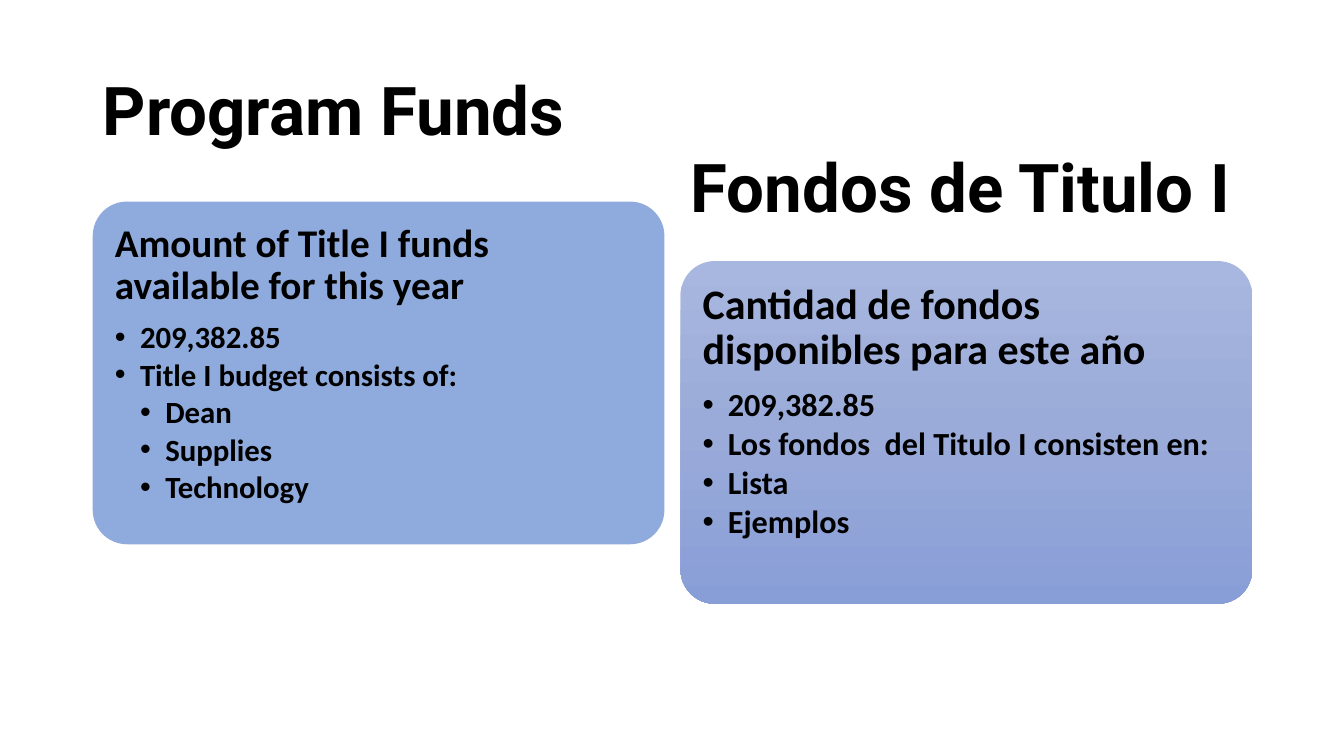
from copy import deepcopy
from dataclasses import dataclass

from lxml.etree import SubElement
from pptx import Presentation
from pptx.dml.color import RGBColor as Rgb
from pptx.enum.shapes import MSO_SHAPE as Shape
from pptx.enum.text import MSO_ANCHOR as Anchor, MSO_AUTO_SIZE as Fit, PP_ALIGN as Align
from pptx.oxml.ns import qn
from pptx.util import Inches, Pt

COLORS = {
    "text": "000000",
    "blue": "8FAADC",
    "top": "A8B7DF",
    "middle": "9AABD9",
    "bottom": "889ED7",
}
CARD_SIZE = (5.67, 3.4)
STEP = 0.25


@dataclass
class Card:
    left: float
    top: float
    fill: tuple[str, ...]
    head: str
    head_size: int
    item_size: int
    items: tuple[tuple[int, str], ...]


CARDS = (
    Card(0.92, 2, ("blue",), "Amount of Title I funds available for this year", 28, 22, (
        (1, "209,382.85"),
        (1, "Title I budget consists of:"),
        (2, "Dean"),
        (2, "Supplies"),
        (2, "Technology"),
    )),
    Card(6.75, 2.59, ("top", "middle", "bottom"),
         "Cantidad de fondos disponibles para este año", 30, 23, (
        (1, "209,382.85"),
        (1, "Los fondos  del Titulo I consisten en:"),
        (1, "Lista"),
        (1, "Ejemplos"),
    )),
)


def color(name: str) -> Rgb:
    return Rgb.from_string(COLORS[name])


def assign(target, values: dict) -> None:
    for name, value in values.items():
        setattr(target, name, value)


def write(para, text: str, size: float, face: str, form: dict) -> None:
    assign(para, {"alignment": Align.LEFT, **form})
    run = para.add_run()
    run.text = text
    assign(run.font, {"name": face, "size": Pt(size), "bold": True})
    run.font.color.rgb = color("text")


def add_bullet(para, level: int) -> None:
    props = para._p.get_or_add_pPr()
    props.set("marL", str(Inches(STEP * level)))
    props.set("indent", str(-Inches(STEP)))
    SubElement(props, qn("a:buFont"), typeface="Arial")
    SubElement(props, qn("a:buChar"), char="•")


def paint(shape, names: tuple[str, ...]) -> None:
    fill = shape.fill
    if len(names) == 1:
        fill.solid()
        fill.fore_color.rgb = color(names[0])
        return
    fill.gradient()
    fill.gradient_angle = 270
    first = shape._element.spPr.find(".//" + qn("a:gs"))
    for _ in names[2:]:
        first.addnext(deepcopy(first))
    for i, (stop, name) in enumerate(zip(fill.gradient_stops, names)):
        stop.position = i / (len(names) - 1)
        stop.color.rgb = color(name)


def draw_card(slide, card: Card) -> None:
    place = map(Inches, (card.left, card.top, *CARD_SIZE))
    shape = slide.shapes.add_shape(Shape.ROUNDED_RECTANGLE, *place)
    shape.adjustments[0] = 0.1
    shape.shadow.inherit = False
    shape.line.fill.background()
    paint(shape, card.fill)
    frame = shape.text_frame
    sides = ("left", "top", "right", "bottom")
    assign(frame, {f"margin_{side}": Inches(0.12) for side in sides})
    assign(frame, {"word_wrap": True, "vertical_anchor": Anchor.TOP})
    write(frame.paragraphs[0], card.head, card.head_size, "Calibri",
          {"line_spacing": 0.9, "space_after": Pt(card.head_size * 0.35)})
    for level, text in card.items:
        para = frame.add_paragraph()
        write(para, text, card.item_size, "Calibri",
              {"level": level, "line_spacing": 0.9, "space_after": Pt(3)})
        add_bullet(para, level)


def draw_title(shape, text: str, box: tuple[float, ...], form: dict, para: dict) -> None:
    assign(shape, dict(zip(("left", "top", "width", "height"), map(Inches, box))))
    assign(shape.text_frame, {"word_wrap": True, **form})
    write(shape.text_frame.paragraphs[0], text, 48, "Roboto", para)


def main() -> None:
    deck = Presentation()
    assign(deck, {"slide_width": Inches(13.33), "slide_height": Inches(7.5)})
    slide = deck.slides.add_slide(deck.slide_layouts[5])
    draw_title(slide.shapes.title, "Program Funds", (0.92, 0.4, 5.75, 1.45),
               {"vertical_anchor": Anchor.MIDDLE, "auto_size": Fit.NONE},
               {"line_spacing": 0.9})
    for card in CARDS:
        draw_card(slide, card)
    draw_title(slide.shapes.add_textbox(0, 0, 0, 0), "Fondos de Titulo I",
               (6.75, 1.39, 6.58, 0.91), {"auto_size": Fit.SHAPE_TO_FIT_TEXT}, {})
    deck.save("out.pptx")


if __name__ == "__main__":
    main()
